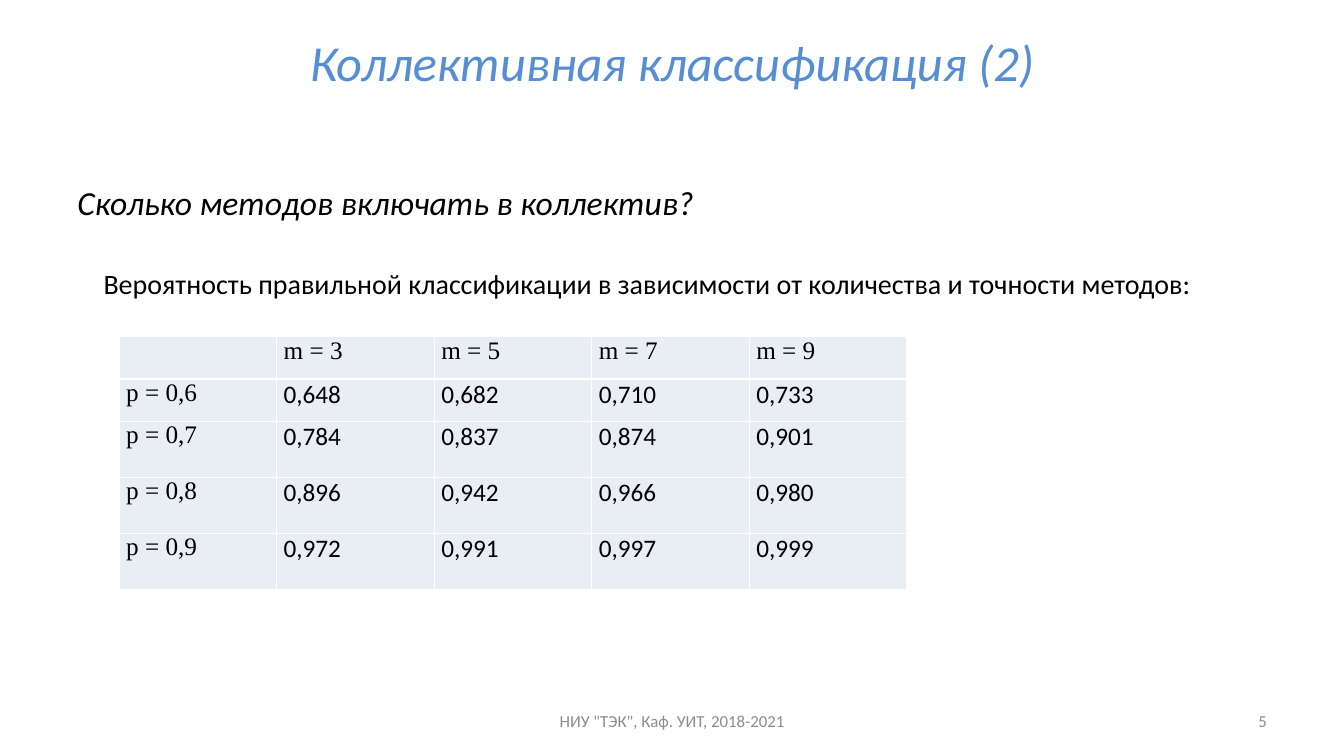
from lxml import etree
from pptx import Presentation
from pptx import util as u
from pptx.dml.color import RGBColor
from pptx.enum import text
from pptx.oxml import ns

SLIDE_SIZE = (33.87, 19.05)
BLACK, GREY, BLUE = "000000", "8C8C8C", "558ED5"
CELL_FILL, BORDER = "E9EDF4", "FFFFFF"
LEFT, CENTER, RIGHT = text.PP_ALIGN.LEFT, text.PP_ALIGN.CENTER, text.PP_ALIGN.RIGHT
TOP, MIDDLE = text.MSO_ANCHOR.TOP, text.MSO_ANCHOR.MIDDLE

METHOD_COUNTS = (3, 5, 7, 9)
PROBABILITIES = {
    "0,6": ("0,648", "0,682", "0,710", "0,733"),
    "0,7": ("0,784", "0,837", "0,874", "0,901"),
    "0,8": ("0,896", "0,942", "0,966", "0,980"),
    "0,9": ("0,972", "0,991", "0,997", "0,999"),
}
COLUMN_WIDTH = 3.97
ROW_HEIGHTS = (1.07, 1.07, 1.41, 1.41, 1.41)


def rgb(value):
    return RGBColor.from_string(value)


def add_run(p, content, color=BLACK, **font):
    r = p.add_run()
    r.text = content
    r.font.color.rgb = rgb(color)
    for name, value in {"name": "Calibri", **font}.items():
        setattr(r.font, name, value)


def add_text(s, content, box, size, color=BLACK, align=LEFT, anchor=TOP,
             wrap=True, italic=False):
    tf = s.shapes.add_textbox(*map(u.Cm, box)).text_frame
    tf.word_wrap = wrap
    tf.vertical_anchor = anchor
    p = tf.paragraphs[0]
    p.alignment = align
    add_run(p, content, color, size=u.Pt(size), italic=italic)


def set_borders(cell):
    """Draw a thin line on all four sides, placed before the cell's fill."""
    tcPr = cell._tc.get_or_add_tcPr()
    for i, side in enumerate(("lnL", "lnR", "lnT", "lnB")):
        ln = etree.Element(ns.qn(f"a:{side}"), w=str(u.Pt(1)))
        fill = etree.SubElement(ln, ns.qn("a:solidFill"))
        etree.SubElement(fill, ns.qn("a:srgbClr"), val=BORDER)
        tcPr.insert(i, ln)


def format_cell(cell, content, font_name):
    margins = {"margin_left": 0.18, "margin_right": 0.18,
               "margin_top": 0, "margin_bottom": 0}
    for name, value in margins.items():
        setattr(cell, name, u.Cm(value))
    cell.fill.solid()
    cell.fill.fore_color.rgb = rgb(CELL_FILL)
    set_borders(cell)
    if content:
        add_run(cell.text_frame.paragraphs[0], content,
                name=font_name, size=u.Pt(18))


def add_probability_table(s, left, top):
    rows = [["", *(f"m = {m}" for m in METHOD_COUNTS)]]
    rows += [[f"p = {p}", *values] for p, values in PROBABILITIES.items()]
    n_columns = len(rows[0])
    size = (n_columns * COLUMN_WIDTH, sum(ROW_HEIGHTS))
    table = s.shapes.add_table(len(rows), n_columns,
                               *map(u.Cm, (left, top, *size))).table
    for column in table.columns:
        column.width = u.Cm(COLUMN_WIDTH)
    for i, (row, height) in enumerate(zip(rows, ROW_HEIGHTS)):
        table.rows[i].height = u.Cm(height)
        for j, content in enumerate(row):
            is_header = i == 0 or j == 0
            format_cell(table.cell(i, j), content,
                        "Times New Roman" if is_header else "Calibri")


def main():
    prs = Presentation()
    prs.slide_width, prs.slide_height = map(u.Cm, SLIDE_SIZE)
    s = prs.slides.add_slide(prs.slide_layouts[6])
    add_text(s, "Коллективная классификация (2)", (1.7, 0.76, 30.48, 1.55), 36,
             BLUE, CENTER, MIDDLE, italic=True)
    add_text(s, "Сколько методов включать в коллектив?",
             (1.7, 4.45, 30.48, 1.57), 24, italic=True)
    add_text(s, "Вероятность правильной классификации в зависимости "
             "от количества и точности методов:",
             (2.36, 6.6, 28.12, 1.12), 20, wrap=False)
    add_probability_table(s, 3, 8.48)
    add_text(s, 'НИУ "ТЭК", Каф. УИТ, 2018-2021', (11.58, 17.65, 10.72, 1.02), 12,
             GREY, CENTER, MIDDLE)
    add_text(s, "5", (24.28, 17.65, 7.9, 1.02), 12, GREY, RIGHT, MIDDLE)
    prs.save("out.pptx")


if __name__ == "__main__":
    main()
